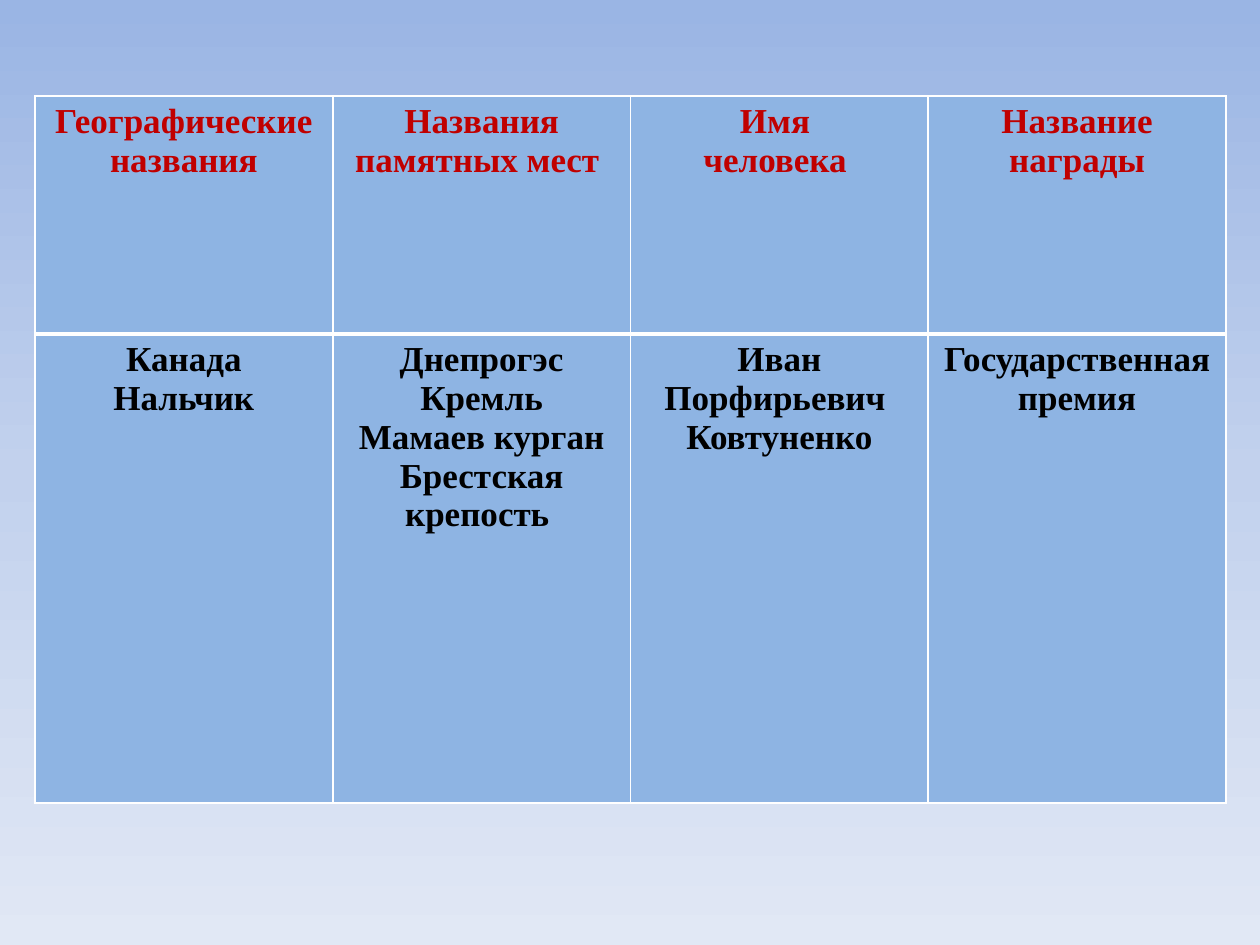
from copy import deepcopy

from lxml import etree
from pptx import Presentation
from pptx import util as u
from pptx.dml.color import RGBColor
from pptx.enum import text
from pptx.oxml.ns import qn

PX = u.Inches(1) / 126
FONT = "Times New Roman"
COLORS = {
    "sky_top": "9AB5E4", "sky_middle": "C2D1ED", "sky_bottom": "E1E8F5",
    "cell": "8EB4E3", "border": "FFFFFF", "heading": "C00000", "answer": "000000",
}
ROWS = [
    ["Географические названия", "Названия памятных мест ",
     "Имя \nчеловека ", "Название награды"],
    ["Канада\nНальчик", "Днепрогэс\nКремль\nМамаев курган\nБрестская крепость ",
     "Иван\nПорфирьевич \nКовтуненко", "Государственная премия"],
]
ROW_HEIGHTS = [238, 469]


def px(n):
    return u.Emu(round(n * PX))


def rgb(name):
    return RGBColor.from_string(COLORS[name])


def paint_background(s):
    fill = s.background.fill
    fill.gradient()
    fill.gradient_angle = 270
    stops = next(s.element.iter(qn("a:gsLst")))
    stops.append(deepcopy(stops[-1]))
    names = ["sky_top", "sky_middle", "sky_bottom"]
    for i, (stop, name) in enumerate(zip(fill.gradient_stops, names)):
        stop.position = i / 2
        stop.color.rgb = rgb(name)


def add_border(cell, side, width):
    ln = etree.SubElement(cell._tc.get_or_add_tcPr(), qn(f"a:ln{side}"), w=str(u.Pt(width)))
    fill = etree.SubElement(ln, qn("a:solidFill"))
    etree.SubElement(fill, qn("a:srgbClr"), val=COLORS["border"])


def fill_cell(cell, words, color, widths):
    for side, width in widths.items():
        add_border(cell, side, width)
    cell.fill.solid()
    cell.fill.fore_color.rgb = rgb("cell")
    cell.text = words
    for p in cell.text_frame.paragraphs:
        p.alignment = text.PP_ALIGN.CENTER
        p.font.name = FONT
        p.font.size = u.Pt(20)
        p.font.bold = True
        p.font.color.rgb = rgb(color)


def add_names_table(s):
    table = s.shapes.add_table(len(ROWS), len(ROWS[0]), px(35), px(96),
                               px(1191), px(sum(ROW_HEIGHTS))).table
    for i, (row, height) in enumerate(zip(ROWS, ROW_HEIGHTS)):
        table.rows[i].height = px(height)
        color = "answer" if i else "heading"
        widths = {"L": 1, "R": 1, "T": 1 if i == 0 else 3, "B": 3 if i == 0 else 1}
        for j, words in enumerate(row):
            fill_cell(table.cell(i, j), words, color, widths)


def main():
    prs = Presentation()
    prs.slide_width, prs.slide_height = px(1260), px(945)
    s = prs.slides.add_slide(prs.slide_layouts[6])
    paint_background(s)
    add_names_table(s)
    prs.save("out.pptx")


if __name__ == "__main__":
    main()
